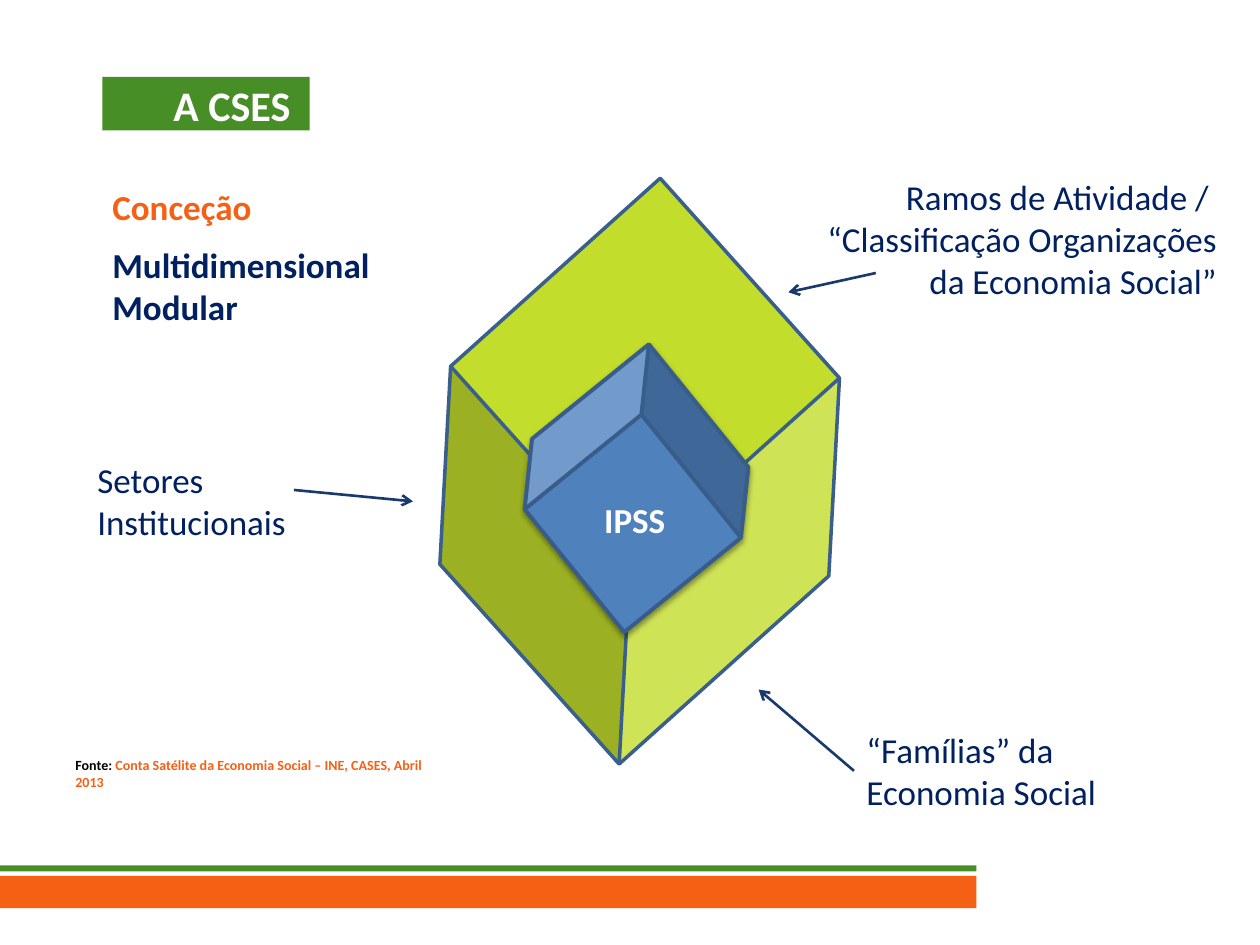
import pptx
import pptx.dml.color
import pptx.enum.shapes
import pptx.enum.text
import pptx.oxml
import pptx.oxml.ns
import pptx.util
from lxml import etree

Pt = pptx.util.Pt
SHAPE = pptx.enum.shapes.MSO_SHAPE
ALIGN = pptx.enum.text.PP_ALIGN
ANCHOR = pptx.enum.text.MSO_ANCHOR
FONT = "Calibri"
COLORS = {
    "orange": "F66014",
    "green": "488E27",
    "navy": "002060",
    "arrow": "1A3A6E",
    "lime": "C3DD2C",
    "lime_edge": "3A5F8C",
    "blue": "4F81BD",
    "blue_edge": "385D8A",
    "white": "FFFFFF",
    "black": "000000",
}


def rgb(name):
    return pptx.dml.color.RGBColor.from_string(COLORS[name])


def add_solid(page, kind, frame, fill, edge=None, edge_width=0, rotation=0):
    solid = page.shapes.add_shape(kind, *map(Pt, frame))
    solid.shadow.inherit = False
    solid.fill.solid()
    solid.fill.fore_color.rgb = rgb(fill)
    if edge:
        solid.line.color.rgb = rgb(edge)
        solid.line.width = Pt(edge_width)
    else:
        solid.line.fill.background()
    solid.rotation = rotation
    return solid


def add_soft_shadow(solid):
    effects = solid._element.spPr.find(pptx.oxml.ns.qn("a:effectLst"))
    effects.append(pptx.oxml.parse_xml(
        f'<a:outerShdw {pptx.oxml.ns.nsdecls("a")} blurRad="{Pt(3.1)}" dist="{Pt(1.6)}" '
        'dir="5400000" rotWithShape="0"><a:srgbClr val="000000">'
        '<a:alpha val="38000"/></a:srgbClr></a:outerShdw>'))


def style_font(font, size, color, bold=False):
    font.name = FONT
    font.size = Pt(size)
    font.bold = bold
    font.color.rgb = rgb(color)


def add_text(page, frame, lines, size=20, color="navy", bold=False,
             align=ALIGN.LEFT, anchor=ANCHOR.TOP, left_margin=7.2):
    box = page.shapes.add_textbox(*map(Pt, frame))
    text = box.text_frame
    text.word_wrap = True
    text.vertical_anchor = anchor
    text.margin_left = Pt(left_margin)
    for index, line in enumerate(lines):
        para = text.add_paragraph() if index else text.paragraphs[0]
        para.text = line
        para.alignment = align
        style_font(para.font, size, color, bold)
    return box


def add_title(page):
    label = add_solid(page, SHAPE.RECTANGLE, (58.5, 44, 118.5, 30.5), "green")
    text = label.text_frame
    text.margin_left = text.margin_top = text.margin_bottom = 0
    text.margin_right = Pt(11)
    text.vertical_anchor = ANCHOR.TOP
    para = text.paragraphs[0]
    para.text = "A CSES"
    para.alignment = ALIGN.RIGHT
    para.line_spacing = 1.06
    style_font(para.font, 24, "white", True)


def add_arrow(page, start, end):
    arrow = page.shapes.add_connector(
        pptx.enum.shapes.MSO_CONNECTOR.STRAIGHT, *map(Pt, start + end))
    arrow.line.color.rgb = rgb("arrow")
    arrow.line.width = Pt(1.5)
    qn = pptx.oxml.ns.qn
    etree.SubElement(arrow.line._get_or_add_ln(), qn("a:tailEnd"), type="arrow")
    etree.SubElement(arrow._element.spPr, qn("a:effectLst"))


def add_source_note(page):
    box = add_text(page, (36, 429, 229.5, 48), ["Fonte: "], 8, "black", True)
    span = box.text_frame.paragraphs[0].add_run()
    span.text = "Conta Satélite da Economia Social – INE, CASES, Abril 2013"
    span.font.color.rgb = rgb("orange")


def add_cubes(page):
    outer = add_solid(page, SHAPE.CUBE, (245, 152.5, 241, 233.5),
                      "lime", "lime_edge", 2, 138.1)
    outer.adjustments[0] = 0.343
    inner = add_solid(page, SHAPE.CUBE, (306.5, 219.5, 114.5, 119),
                      "blue", "blue_edge", 2.25, 321)
    add_soft_shadow(inner)
    add_text(page, (329, 281.5, 67.5, 31.5), ["IPSS"],
             color="white", bold=True, align=ALIGN.CENTER)


def main():
    deck = pptx.Presentation()
    deck.slide_width, deck.slide_height = Pt(720), Pt(540)
    page = deck.slides.add_slide(deck.slide_layouts[6])

    add_solid(page, SHAPE.RECTANGLE, (0, 500.5, 558, 18.5), "orange")
    add_solid(page, SHAPE.RECTANGLE, (0, 494.5, 558, 3.5), "green")
    add_title(page)

    add_text(page, (52.5, 84.5, 255.5, 67), ["Conceção"], color="orange",
             bold=True, anchor=ANCHOR.MIDDLE, left_margin=11.7)
    add_text(page, (52.5, 129.5, 177, 67), ["Multidimensional", "Modular"],
             bold=True, anchor=ANCHOR.MIDDLE, left_margin=11.7)

    for start, end in [((168, 280), (236, 286.5)),
                       ((500.5, 156), (450.5, 167)),
                       ((488, 440.5), (433.5, 394))]:
        add_arrow(page, start, end)

    add_text(page, (48.5, 258.5, 142, 55.5), ["Setores Institucionais"])
    add_text(page, (488, 412.5, 170, 55.5), ["“Famílias” da Economia Social"])
    add_text(page, (458.5, 97, 244, 80),
             ["Ramos de Atividade / ",
              "“Classificação Organizações da Economia Social”"],
             align=ALIGN.RIGHT)

    add_cubes(page)
    add_source_note(page)
    deck.save("out.pptx")


if __name__ == "__main__":
    main()
